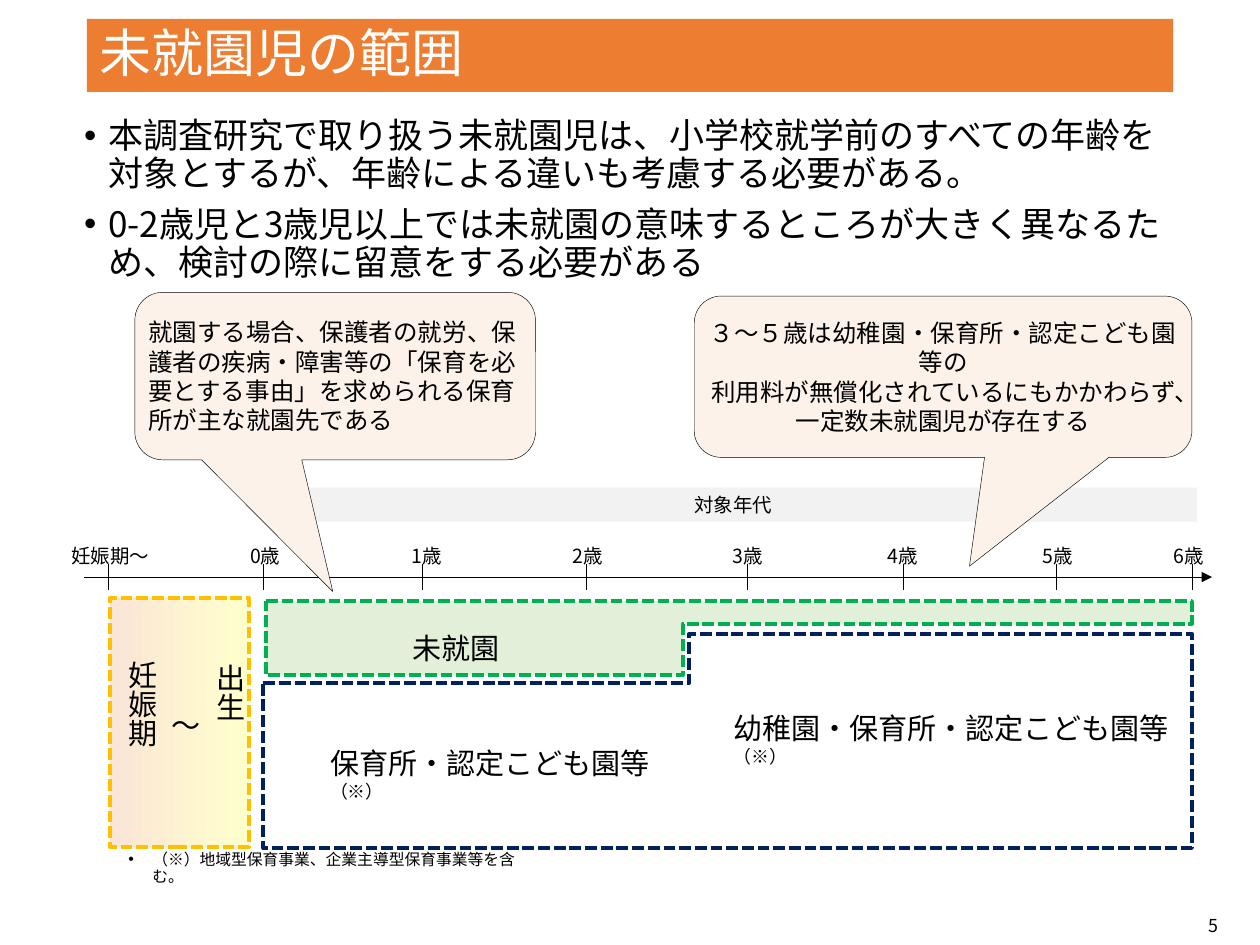
from pptx import Presentation
from pptx import util as u
from pptx.dml.color import RGBColor
from pptx.enum import dml, shapes, text
from pptx.oxml.ns import qn
from lxml import etree

BLACK = RGBColor(0x00, 0x00, 0x00)
WHITE = RGBColor(0xFF, 0xFF, 0xFF)
ORANGE = RGBColor(0xED, 0x7D, 0x31)
CREAM = RGBColor(0xFD, 0xF2, 0xEA)
GRAY = RGBColor(0xF2, 0xF2, 0xF2)
GREEN = RGBColor(0x00, 0xB0, 0x50)
PALE_GREEN = RGBColor(0xE2, 0xF0, 0xD9)
NAVY = RGBColor(0x00, 0x20, 0x60)
GOLD = RGBColor(0xFF, 0xC0, 0x00)
PEACH = RGBColor(0xFB, 0xE5, 0xD6)
PALE_YELLOW = RGBColor(0xFF, 0xFF, 0xCC)

LEFT, CENTER, RIGHT = (text.PP_ALIGN.LEFT, text.PP_ALIGN.CENTER,
                       text.PP_ALIGN.RIGHT)
TOP, MIDDLE = text.MSO_ANCHOR.TOP, text.MSO_ANCHOR.MIDDLE
SHAPE = shapes.MSO_SHAPE
TIGHT = (0.04, 0.04, 0.04, 0.04)
FLUSH = (0, 0.05, 0, 0.05)
NORMAL = (0.1, 0.05, 0.1, 0.05)
LABEL = (0.07, 0.11, 0.07, 0.05)


class Deck:
    font = "Noto Sans CJK JP"

    def __init__(self, width, height):
        self.prs = Presentation()
        self.prs.slide_width = u.Inches(width)
        self.prs.slide_height = u.Inches(height)
        self.s = self.prs.slides.add_slide(self.prs.slide_layouts[5])

    def style_run(self, r, size, color=BLACK):
        r.font.size, r.font.name = u.Pt(size), self.font
        r.font.color.rgb = color
        ea = etree.SubElement(r.font._element, qn("a:ea"))
        ea.set("typeface", self.font)

    def fill_text(self, sp, paragraphs, size, align=CENTER, anchor=MIDDLE,
                  insets=TIGHT, color=BLACK):
        """Fill a shape; a paragraph is a string or a list of (text, size)."""
        tf = sp.text_frame
        tf.word_wrap, tf.auto_size = True, text.MSO_AUTO_SIZE.NONE
        tf.vertical_anchor = anchor
        (tf.margin_left, tf.margin_top,
         tf.margin_right, tf.margin_bottom) = map(u.Inches, insets)
        for i, runs in enumerate(paragraphs):
            p = tf.add_paragraph() if i else tf.paragraphs[0]
            p.alignment = align
            if isinstance(runs, str):
                runs = [(runs, size)]
            for words, run_size in runs:
                r = p.add_run()
                r.text = words
                self.style_run(r, run_size, color)
        return sp

    def title(self, box, words):
        sp = self.s.shapes.title
        sp.left, sp.top, sp.width, sp.height = map(u.Inches, box)
        self.paint(sp, ORANGE)
        self.fill_text(sp, [words], 29.7, LEFT, insets=NORMAL, color=WHITE)
        sp.text_frame.paragraphs[0].line_spacing = 0.9

    def text(self, box, paragraphs, size, **style):
        sp = self.s.shapes.add_textbox(*map(u.Inches, box))
        return self.fill_text(sp, paragraphs, size, **style)

    def vertical_text(self, box, words, size):
        sp = self.text(box, [words], size, insets=LABEL)
        sp.text_frame._txBody.bodyPr.set("vert", "eaVert")

    def bullets(self, box, items, size, anchor=TOP):
        sp = self.text(box, items, size, align=LEFT, anchor=anchor,
                       insets=NORMAL)
        indent = u.Inches(0.19)
        for i, p in enumerate(sp.text_frame.paragraphs):
            p.line_spacing = 0.9
            p.space_before = u.Pt(7.5 if i else 0)
            pPr = p._p.get_or_add_pPr()
            pPr.set("marL", str(indent))
            pPr.set("indent", str(-indent))
            etree.SubElement(pPr, qn("a:buFont")).set("typeface", "Arial")
            etree.SubElement(pPr, qn("a:buChar")).set("char", "•")

    def paint(self, sp, fill=None, line=None, width=2.25, dashed=True):
        if hasattr(sp, "shadow"):
            sp.shadow.inherit = False
        if fill is not None:
            sp.fill.solid()
            sp.fill.fore_color.rgb = fill
        if line is None:
            sp.line.fill.background()
            return
        sp.line.color.rgb, sp.line.width = line, u.Pt(width)
        if dashed:
            sp.line.dash_style = dml.MSO_LINE.SQUARE_DOT

    def band(self, box, words, size):
        sp = self.s.shapes.add_shape(SHAPE.RECTANGLE, *map(u.Inches, box))
        self.paint(sp, GRAY)
        self.fill_text(sp, [words], size)

    def gradient_box(self, box, start, end, line):
        sp = self.s.shapes.add_shape(SHAPE.RECTANGLE, *map(u.Inches, box))
        sp.fill.gradient()
        sp.fill.gradient_angle = 0
        for stop, color in zip(sp.fill.gradient_stops, (start, end)):
            stop.color.rgb = color
        self.paint(sp, line=line)

    def outline(self, points, fill, line):
        first, *rest = [tuple(map(u.Inches, pt)) for pt in points]
        builder = self.s.shapes.build_freeform(*first)
        builder.add_line_segments(rest)
        self.paint(builder.convert_to_shape(), fill, line)

    def callout(self, box, tip, paragraphs, align):
        sp = self.s.shapes.add_shape(SHAPE.ROUNDED_RECTANGULAR_CALLOUT,
                                     *map(u.Inches, box))
        sp.adjustments[0], sp.adjustments[1] = tip
        self.paint(sp, CREAM, BLACK, 0.25, dashed=False)
        self.fill_text(sp, paragraphs, 14, align)

    def line(self, x1, y1, x2, y2, arrow=False):
        c = self.s.shapes.add_connector(shapes.MSO_CONNECTOR.STRAIGHT,
                                        *map(u.Inches, (x1, y1, x2, y2)))
        c.line.color.rgb, c.line.width = BLACK, u.Pt(0.25)
        if arrow:
            etree.SubElement(c.line._get_or_add_ln(),
                             qn("a:tailEnd")).set("type", "triangle")
        etree.SubElement(c._element.spPr, qn("a:effectLst"))


def main():
    d = Deck(10, 7.5)
    d.title((0.69, 0.15, 8.62, 0.58), "未就園児の範囲")
    d.bullets((0.57, 0.89, 8.94, 1.17), [
        "本調査研究で取り扱う未就園児は、小学校就学前のすべての年齢を"
        "対象とするが、年齢による違いも考慮する必要がある。",
        "0-2歳児と3歳児以上では未就園の意味するところが大きく異なるため、"
        "検討の際に留意をする必要がある"], 20)

    # Age axis: label, tick position, label left edge
    d.band((2.14, 3.87, 7.36, 0.27), "対象年代", 11.1)
    d.line(0.67, 4.58, 9.62, 4.58, arrow=True)
    ages = [("妊娠期～", 0.86, 0.45), ("0歳", 2.09, 1.68), ("1歳", 3.35, 2.96),
            ("2歳", 4.65, 4.24), ("3歳", 5.93, 5.51), ("4歳", 7.17, 6.74),
            ("5歳", 8.38, 7.97), ("6歳", 9.46, 9.01)]
    for age, tick, left in ages:
        d.line(tick, 4.48, tick, 4.68)
        d.text((left, 4.24, 0.85, 0.34), [age], 11.1)

    # Pregnancy to birth
    d.gradient_box((0.87, 4.75, 1.11, 1.97), PEACH, PALE_YELLOW, GOLD)
    d.vertical_text((0.84, 5.14, 0.57, 1), "妊娠期", 16.6)
    d.vertical_text((1.54, 5.16, 0.57, 1), "出生", 16.6)
    d.text((1.19, 5.22, 0.57, 1), ["～"], 16.6, insets=LABEL)

    # Not enrolled above, enrolled below; both step at about age 3
    d.outline([(2.11, 4.77), (9.46, 4.77), (9.46, 4.95), (5.42, 4.95),
               (5.42, 5.36), (2.11, 5.36)], PALE_GREEN, GREEN)
    d.text((2.62, 4.94, 2, 0.34), ["未就園"], 16.6, insets=LABEL)
    d.outline([(2.09, 5.42), (5.47, 5.42), (5.47, 5.03), (9.46, 5.03),
               (9.46, 6.73), (2.09, 6.73)], WHITE, NAVY)
    for box, facilities in [
            ((2.62, 5.87, 2.91, 0.5), "保育所・認定こども園等"),
            ((5.82, 5.59, 3.52, 0.5), "幼稚園・保育所・認定こども園等")]:
        d.text(box, [[(facilities, 16.6), ("（※）", 10.2)]], 16.6,
               align=LEFT, anchor=TOP, insets=FLUSH)

    d.callout((1.07, 2.32, 3.18, 1.33), (-0.006, 1.286), [
        "就園する場合、保護者の就労、保護者の疾病・障害等の「保育を必要とする"
        "事由」を求められる保育所が主な就園先である"], LEFT)
    d.callout((5.51, 2.35, 3.95, 1.28), (0.053, 1.175), [
        "３～５歳は幼稚園・保育所・認定こども園等の",
        "利用料が無償化されているにもかかわらず、",
        "一定数未就園児が存在する"], CENTER)

    d.bullets((0.92, 6.69, 3.32, 0.41),
              ["（※）地域型保育事業、企業主導型保育事業等を含む。"], 9, MIDDLE)
    d.text((9.23, 7.21, 0.44, 0.27), ["5"], 10.2, align=RIGHT, anchor=TOP,
           insets=FLUSH)
    d.prs.save("out.pptx")


if __name__ == "__main__":
    main()
